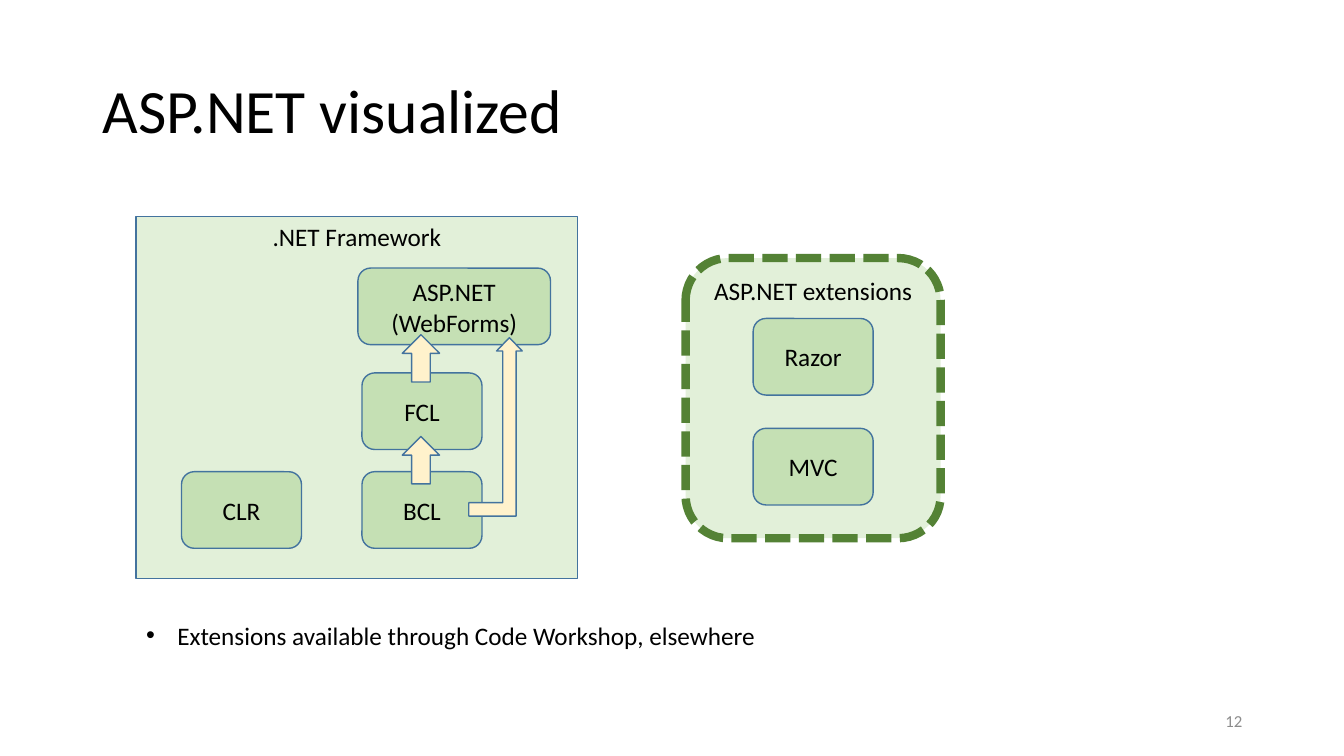
"""Build the slide that shows the parts of ASP.NET and its extensions."""
import pptx
import pptx.util
import pptx.dml.color
import pptx.enum.dml
import pptx.enum.shapes
import pptx.enum.text
import lxml.etree

Inches = pptx.util.Inches
Pt = pptx.util.Pt
RGBColor = pptx.dml.color.RGBColor
MSO_SHAPE = pptx.enum.shapes.MSO_SHAPE
PP_ALIGN = pptx.enum.text.PP_ALIGN
MSO_ANCHOR = pptx.enum.text.MSO_ANCHOR

BLACK = RGBColor(0x00, 0x00, 0x00)
GRAY = RGBColor(0x8C, 0x8C, 0x8C)
PALE_GREEN = RGBColor(0xE2, 0xF0, 0xD9)
GREEN = RGBColor(0xC5, 0xE0, 0xB4)
DARK_GREEN = RGBColor(0x54, 0x82, 0x35)
BLUE = RGBColor(0x43, 0x73, 0x9E)
CREAM = RGBColor(0xFF, 0xF2, 0xCC)

prs = pptx.Presentation()
prs.slide_width = Inches(13.33)
prs.slide_height = Inches(7.5)
s = prs.slides.add_slide(prs.slide_layouts[6])


def write(sp, lines, size=18, color=BLACK, align=PP_ALIGN.LEFT, anchor=MSO_ANCHOR.TOP):
    tf = sp.text_frame
    tf.word_wrap = True
    tf.vertical_anchor = anchor
    for i, line in enumerate(lines):
        p = tf.add_paragraph() if i else tf.paragraphs[0]
        p.alignment = align
        r = p.add_run()
        r.text = line
        r.font.name = "Calibri"
        r.font.size = Pt(size)
        r.font.color.rgb = color
    return tf


def add_box(kind, left, top, width, height, fill):
    sp = s.shapes.add_shape(kind, Inches(left), Inches(top), Inches(width), Inches(height))
    sp.shadow.inherit = False
    sp.fill.solid()
    sp.fill.fore_color.rgb = fill
    sp.line.color.rgb = BLUE
    sp.line.width = Pt(1)
    return sp


title = s.shapes.add_textbox(Inches(0.92), Inches(0.4), Inches(11.5), Inches(1.45))
tf = write(title, ["ASP.NET visualized"], size=44, anchor=MSO_ANCHOR.MIDDLE)
tf.paragraphs[0].line_spacing = 0.9

framework = add_box(MSO_SHAPE.RECTANGLE, 1.35, 2.15, 4.38, 3.59, PALE_GREEN)
write(framework, [".NET Framework"], align=PP_ALIGN.CENTER)

extensions = add_box(MSO_SHAPE.ROUNDED_RECTANGLE, 6.8, 2.56, 2.53, 2.78, PALE_GREEN)
extensions.line.color.rgb = DARK_GREEN
extensions.line.width = Pt(6)
extensions.line.dash_style = pptx.enum.dml.MSO_LINE.SQUARE_DOT
write(extensions, ["ASP.NET extensions"], align=PP_ALIGN.CENTER)

components = [
    ("CLR", 1.8, 4.68),
    ("BCL", 3.59, 4.68),
    ("FCL", 3.59, 3.7),
    ("MVC", 7.47, 4.25),
    ("Razor", 7.47, 3.16),
]
for name, left, top in components:
    sp = add_box(MSO_SHAPE.ROUNDED_RECTANGLE, left, top, 1.19, 0.76, GREEN)
    write(sp, [name], align=PP_ALIGN.CENTER, anchor=MSO_ANCHOR.MIDDLE)

webforms = add_box(MSO_SHAPE.ROUNDED_RECTANGLE, 3.55, 2.66, 1.91, 0.76, GREEN)
write(webforms, ["ASP.NET", "(WebForms)"], align=PP_ALIGN.CENTER)

for top in (4.38, 3.37):
    arrow = add_box(MSO_SHAPE.RIGHT_ARROW, 3.94, top, 0.47, 0.37, CREAM)
    arrow.rotation = 270

bent = add_box(MSO_SHAPE.BENT_UP_ARROW, 4.65, 3.35, 0.53, 1.77, CREAM)
bent.adjustments[1] = 0.24

note = s.shapes.add_textbox(Inches(1.35), Inches(6.1), Inches(8.45), Inches(0.4))
tf = write(note, ["Extensions available through Code Workshop, elsewhere"])
pPr = tf.paragraphs[0]._p.get_or_add_pPr()
pPr.set("marL", str(Inches(0.31)))
pPr.set("indent", str(Inches(-0.31)))
ns = "{http://schemas.openxmlformats.org/drawingml/2006/main}"
lxml.etree.SubElement(pPr, ns + "buFont").set("typeface", "Arial")
lxml.etree.SubElement(pPr, ns + "buChar").set("char", "•")

number = s.shapes.add_textbox(Inches(9.42), Inches(6.95), Inches(3), Inches(0.4))
write(number, ["12"], size=12, color=GRAY, align=PP_ALIGN.RIGHT, anchor=MSO_ANCHOR.MIDDLE)

prs.save("out.pptx")
